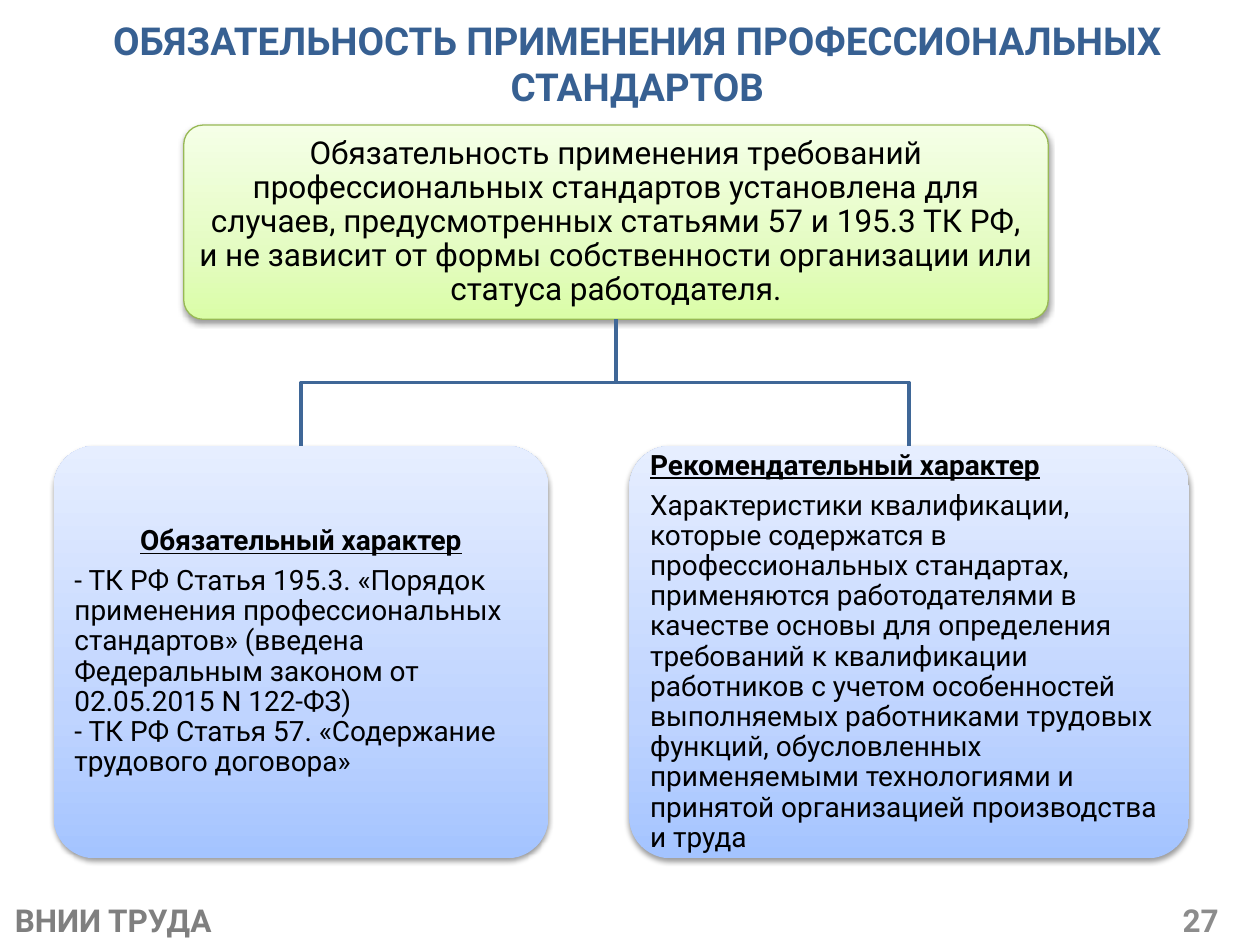
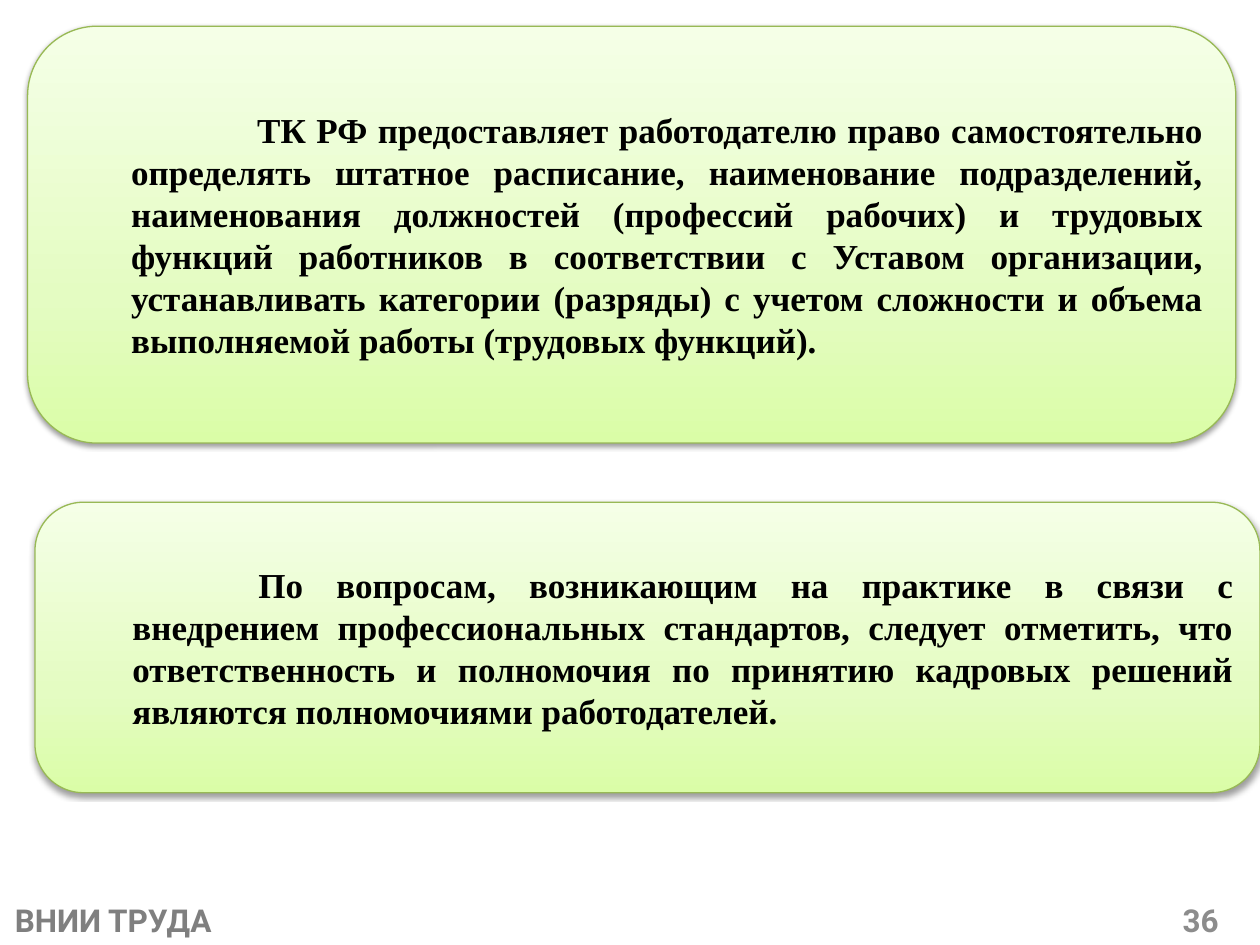
from copy import deepcopy

from lxml.etree import SubElement
from pptx import Presentation
from pptx.dml.color import RGBColor
from pptx.enum.shapes import MSO_SHAPE
from pptx.enum.text import MSO_ANCHOR, PP_ALIGN
from pptx.oxml.ns import qn
from pptx.util import Pt

BLACK = RGBColor(0x00, 0x00, 0x00)
TITLE_BLUE = RGBColor(0x37, 0x60, 0x92)
LINE_BLUE = RGBColor(0x3F, 0x67, 0x97)
GREEN_EDGE = RGBColor(0x98, 0xB9, 0x55)
FOOTER_GRAY = RGBColor(0x7F, 0x7F, 0x7F)
NUMBER_GRAY = RGBColor(0x8C, 0x8C, 0x8C)
GREENS = [RGBColor(0xDA, 0xFD, 0xA7), RGBColor(0xE4, 0xFC, 0xC2), RGBColor(0xF5, 0xFF, 0xE7)]
BLUES = [RGBColor(0xA4, 0xC4, 0xFF), RGBColor(0xBF, 0xD4, 0xFF), RGBColor(0xE6, 0xEE, 0xFF)]
STOP_POSITIONS = [0, 0.35, 1]
SANS = "Roboto"
SERIF = "Times New Roman"


def add_panel(page, left, top, width, height, colors, edge=None, rounding=None):
    panel = page.shapes.add_shape(
        MSO_SHAPE.ROUNDED_RECTANGLE, Pt(left), Pt(top), Pt(width), Pt(height))
    if rounding:
        panel.adjustments[0] = rounding
    panel.fill.gradient()
    panel.fill.gradient_angle = 90
    properties = panel.element.spPr
    stop_list = properties.find(".//" + qn("a:gsLst"))
    stop_list.insert(1, deepcopy(stop_list[0]))
    for stop, position, color in zip(panel.fill.gradient_stops, STOP_POSITIONS, colors):
        stop.position = position
        stop.color.rgb = color
    if edge:
        panel.line.color.rgb = edge
        panel.line.width = Pt(0.75)
    else:
        panel.line.fill.background()
    panel.shadow.inherit = False
    shadow = SubElement(
        properties.find(qn("a:effectLst")), qn("a:outerShdw"),
        blurRad=str(Pt(3.1)), dist=str(Pt(1.6)), dir="5400000", rotWithShape="0")
    shade = SubElement(shadow, qn("a:srgbClr"), val="000000")
    SubElement(shade, qn("a:alpha"), val="38000")
    panel.text_frame.word_wrap = True
    panel.text_frame.vertical_anchor = MSO_ANCHOR.MIDDLE
    return panel


def add_para(frame, text, size, color=BLACK, align=PP_ALIGN.LEFT, bold=False, name=SANS):
    para = frame.paragraphs[0]
    if para.runs:
        para = frame.add_paragraph()
    para.add_run().text = text
    para.alignment = align
    para.font.size = Pt(size)
    para.font.name = name
    para.font.bold = bold
    para.font.color.rgb = color
    return para


deck = Presentation()
deck.slide_width = Pt(720)
deck.slide_height = Pt(540)

pages = []
for number in ["27", "36"]:
    page = deck.slides.add_slide(deck.slide_layouts[6])
    pages.append(page)
    for text, left, width, color, align in [
        (number, 535.7, 167.8, NUMBER_GRAY, PP_ALIGN.RIGHT),
        ("ВНИИ ТРУДА", 1.4, 170, FOOTER_GRAY, PP_ALIGN.LEFT),
    ]:
        box = page.shapes.add_textbox(Pt(left), Pt(511), Pt(width), Pt(29))
        box.text_frame.word_wrap = True
        box.text_frame.vertical_anchor = MSO_ANCHOR.MIDDLE
        add_para(box.text_frame, text, 18, color, align, bold=True)

standards_page, employer_page = pages

title = standards_page.shapes.add_textbox(Pt(16.5), Pt(21.6), Pt(695.5), Pt(29))
title.text_frame.word_wrap = True
title.text_frame.vertical_anchor = MSO_ANCHOR.MIDDLE
add_para(title.text_frame, "ОБЯЗАТЕЛЬНОСТЬ ПРИМЕНЕНИЯ ПРОФЕССИОНАЛЬНЫХ СТАНДАРТОВ",
         22, TITLE_BLUE, PP_ALIGN.CENTER, bold=True)

rule = add_panel(standards_page, 105, 71.5, 494, 111, GREENS, GREEN_EDGE, 0.1)
add_para(
    rule.text_frame,
    "Обязательность применения требований профессиональных стандартов установлена для "
    "случаев, предусмотренных статьями 57 и 195.3 ТК РФ, и не зависит от формы "
    "собственности организации или статуса работодателя.",
    18, align=PP_ALIGN.CENTER)

branches = [
    (30.7, 282.6, PP_ALIGN.CENTER, "Обязательный характер", [
        "- ТК РФ Статья 195.3. «Порядок применения профессиональных стандартов» "
        "(введена Федеральным законом от 02.05.2015 N 122-ФЗ)",
        "- ТК РФ Статья 57. «Содержание трудового договора»",
    ]),
    (359.7, 319.7, PP_ALIGN.LEFT, "Рекомендательный характер", [
        "Характеристики квалификации, которые содержатся в профессиональных стандартах, "
        "применяются работодателями в качестве основы для определения требований к "
        "квалификации работников с учетом особенностей выполняемых работниками трудовых "
        "функций, обусловленных применяемыми технологиями и принятой организацией "
        "производства и труда",
    ]),
]
branch_panels = []
for left, width, align, heading, details in branches:
    panel = add_panel(standards_page, left, 254.8, width, 235.7, BLUES, rounding=0.1)
    branch_panels.append(panel)
    para = add_para(panel.text_frame, heading, 16, align=align, bold=True)
    para.font.underline = True
    para.space_after = Pt(5.6)
    for detail in details:
        add_para(panel.text_frame, detail, 16)

    start_x = rule.left + rule.width // 2
    start_y = rule.top + rule.height
    end_x = panel.left + panel.width // 2
    middle_y = (start_y + panel.top) // 2
    builder = standards_page.shapes.build_freeform(start_x, start_y)
    builder.add_line_segments(
        [(start_x, middle_y), (end_x, middle_y), (end_x, panel.top)], close=False)
    branch = builder.convert_to_shape()
    branch.fill.background()
    branch.line.color.rgb = LINE_BLUE
    branch.line.width = Pt(2)
    branch.shadow.inherit = False

for panel in [rule] + branch_panels:
    frame = panel.text_frame
    frame.margin_left = frame.margin_right = Pt(5)
    frame.margin_top = frame.margin_bottom = Pt(5)
    for para in frame.paragraphs:
        para.line_spacing = 0.9

statements = [
    (15.8, 15, 690.4, 238.2,
     "ТК РФ предоставляет работодателю право самостоятельно определять штатное "
     "расписание, наименование подразделений, наименования должностей (профессий "
     "рабочих) и трудовых функций работников в соответствии с Уставом организации, "
     "устанавливать категории (разряды) с учетом сложности и объема выполняемой работы "
     "(трудовых функций)."),
    (20, 287, 700, 166,
     "По вопросам, возникающим на практике в связи с внедрением профессиональных "
     "стандартов, следует отметить, что ответственность и полномочия по принятию "
     "кадровых решений являются полномочиями работодателей."),
]
for left, top, width, height, text in statements:
    panel = add_panel(employer_page, left, top, width, height, GREENS, GREEN_EDGE)
    para = add_para(panel.text_frame, text, 20, align=PP_ALIGN.JUSTIFY, bold=True, name=SERIF)
    indents = para._p.get_or_add_pPr()
    indents.set("marL", str(Pt(40.5)))
    indents.set("indent", str(Pt(72)))

deck.save("out.pptx")
